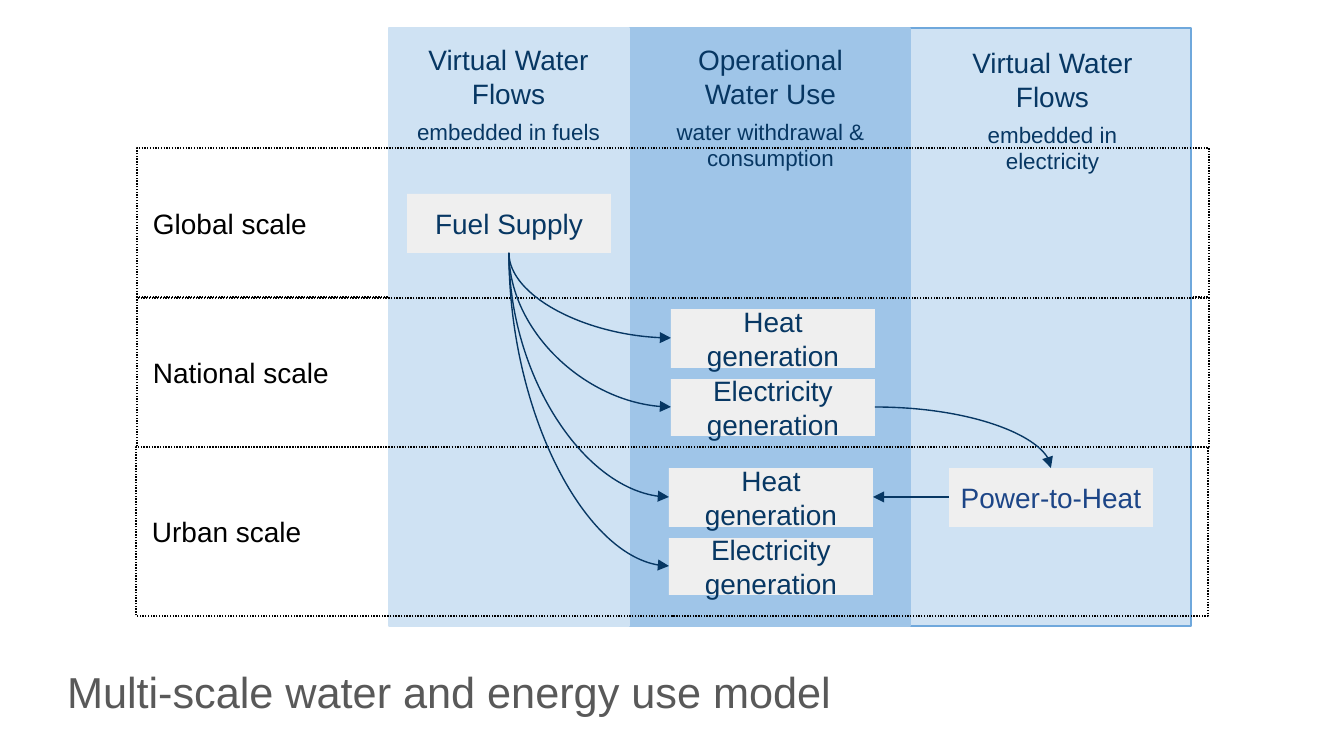
"""Build a slide that maps water and energy flows across three scales."""
import pptx
import pptx.dml.color
import pptx.enum.dml
import pptx.enum.shapes
import pptx.enum.text
import pptx.oxml.ns
import pptx.util
from lxml import etree

RGBColor = pptx.dml.color.RGBColor
BLACK = RGBColor(0x00, 0x00, 0x00)
NAVY = RGBColor(0x07, 0x37, 0x63)
ROYAL = RGBColor(0x1C, 0x45, 0x87)
PALE_BLUE = RGBColor(0xCF, 0xE2, 0xF3)
MID_BLUE = RGBColor(0x9F, 0xC5, 0xE8)
EDGE_BLUE = RGBColor(0x6F, 0xA8, 0xDC)
LIGHT_GREY = RGBColor(0xEF, 0xEF, 0xEF)
DARK_GREY = RGBColor(0x59, 0x59, 0x59)

ALIGN = pptx.enum.text.PP_ALIGN
ANCHOR = pptx.enum.text.MSO_ANCHOR
CONNECTOR = pptx.enum.shapes.MSO_CONNECTOR
LINE_WIDTH = pptx.util.Pt(0.75)
BOX_WIDTH = 204
INSET = 16


def px(*lengths):
    return [pptx.util.Emu(round(length * 914400 / 134.4)) for length in lengths]


def set_frame(frame, anchor, side=INSET, upright=INSET):
    frame.word_wrap = True
    frame.auto_size = pptx.enum.text.MSO_AUTO_SIZE.NONE
    frame.vertical_anchor = anchor
    frame.margin_left, frame.margin_right = px(side, side)
    frame.margin_top, frame.margin_bottom = px(upright, upright)


def write(para, text, size, color, align=ALIGN.CENTER):
    para.alignment = align
    span = para.add_run()
    span.text = text
    span.font.name = "Arial"
    span.font.size = pptx.util.Pt(size)
    span.font.color.rgb = color


def add_box(page, area, fill=None, edge=None):
    box = page.shapes.add_shape(pptx.enum.shapes.MSO_SHAPE.RECTANGLE, *px(*area))
    box.shadow.inherit = False
    if fill is None:
        box.fill.background()
    else:
        box.fill.solid()
        box.fill.fore_color.rgb = fill
    if edge is None:
        box.line.fill.background()
    else:
        box.line.color.rgb = edge
        box.line.width = LINE_WIDTH
    return box


def add_scale(page, text, left, top, height):
    box = add_box(page, (left, top, 1072, height), edge=BLACK)
    box.line.dash_style = pptx.enum.dml.MSO_LINE.ROUND_DOT
    set_frame(box.text_frame, ANCHOR.MIDDLE)
    write(box.text_frame.paragraphs[0], text, 15, BLACK, ALIGN.LEFT)


def add_process(page, text, left, top, height=59, color=NAVY, side=INSET):
    box = add_box(page, (left, top, BOX_WIDTH, height), fill=LIGHT_GREY)
    set_frame(box.text_frame, ANCHOR.MIDDLE, side)
    write(box.text_frame.paragraphs[0], text, 15, color)


def add_heading(page, title, detail, left, top, width):
    box = page.shapes.add_textbox(*px(left, top, width, 106))
    set_frame(box.text_frame, ANCHOR.TOP)
    write(box.text_frame.paragraphs[0], title, 15, NAVY)
    para = box.text_frame.add_paragraph()
    para.space_before = pptx.util.Pt(4)
    write(para, detail, 12, NAVY)


def add_arrow(page, start, end, kind=CONNECTOR.STRAIGHT):
    arrow = page.shapes.add_connector(kind, *px(*start, *end))
    arrow.line.color.rgb = NAVY
    arrow.line.width = LINE_WIDTH
    tail = etree.SubElement(arrow.line._get_or_add_ln(), pptx.oxml.ns.qn("a:tailEnd"))
    tail.set("type", "triangle")
    etree.SubElement(arrow._element.spPr, pptx.oxml.ns.qn("a:effectLst"))
    return arrow


def add_bend(page, start, end, downward=False):
    arrow = add_arrow(page, start, end, CONNECTOR.CURVE)
    properties = arrow._element.spPr
    properties.find(pptx.oxml.ns.qn("a:prstGeom")).set("prst", "curvedConnector2")
    if downward:
        (x1, y1), (x2, y2) = start, end
        width, height = y2 - y1, x2 - x1
        left, top = (x1 + x2 - width) / 2, (y1 + y2 - height) / 2
        arrow.left, arrow.top, arrow.width, arrow.height = px(left, top, width, height)
        frame = properties.find(pptx.oxml.ns.qn("a:xfrm"))
        frame.set("rot", str(270 * 60000))
        frame.set("flipH", "1")


def add_title(page, text):
    title = page.shapes.title
    title.left, title.top, title.width, title.height = px(44, 652, 882, 89)
    set_frame(title.text_frame, ANCHOR.MIDDLE, 23, 23)
    para = title.text_frame.paragraphs[0]
    para.line_spacing = 0.8
    write(para, text, 23.2, DARK_GREY, ALIGN.LEFT)


def main():
    deck = pptx.Presentation()
    deck.slide_width, deck.slide_height = px(1344, 756)
    page = deck.slides.add_slide(deck.slide_layouts[5])
    add_title(page, "Multi-scale water and energy use model")

    add_scale(page, "National scale", 137, 297, 150)
    for left, width, fill, edge in (
        (910, 281, PALE_BLUE, EDGE_BLUE),
        (629, 281, MID_BLUE, MID_BLUE),
        (389, 240, PALE_BLUE, PALE_BLUE),
    ):
        add_box(page, (left, 28, width, 598), fill, edge)
    add_heading(page, "Virtual Water Flows", "embedded in fuels", 389, 27, 239)
    add_heading(page, "Operational Water Use", "water withdrawal & consumption", 644, 27, 253)
    add_heading(page, "Virtual Water Flows", "embedded in electricity", 926, 30, 253)
    add_scale(page, "Global scale", 137, 148, 150)
    add_scale(page, "Urban scale", 136, 447, 169)

    add_process(page, "Fuel Supply", 407, 194)
    add_process(page, "Power-to-Heat", 949, 468, color=ROYAL, side=6)
    for left, top in ((671, 309), (669, 468)):
        add_process(page, "Heat generation", left, top)
        add_process(page, "Electricity generation", left, top + 70, 57)
        for middle in (top + 29, top + 98):
            add_bend(page, (509, 253), (left, middle), downward=True)
    add_bend(page, (875, 407), (1051, 468))
    add_arrow(page, (949, 497), (873, 497))
    deck.save("out.pptx")


if __name__ == "__main__":
    main()
